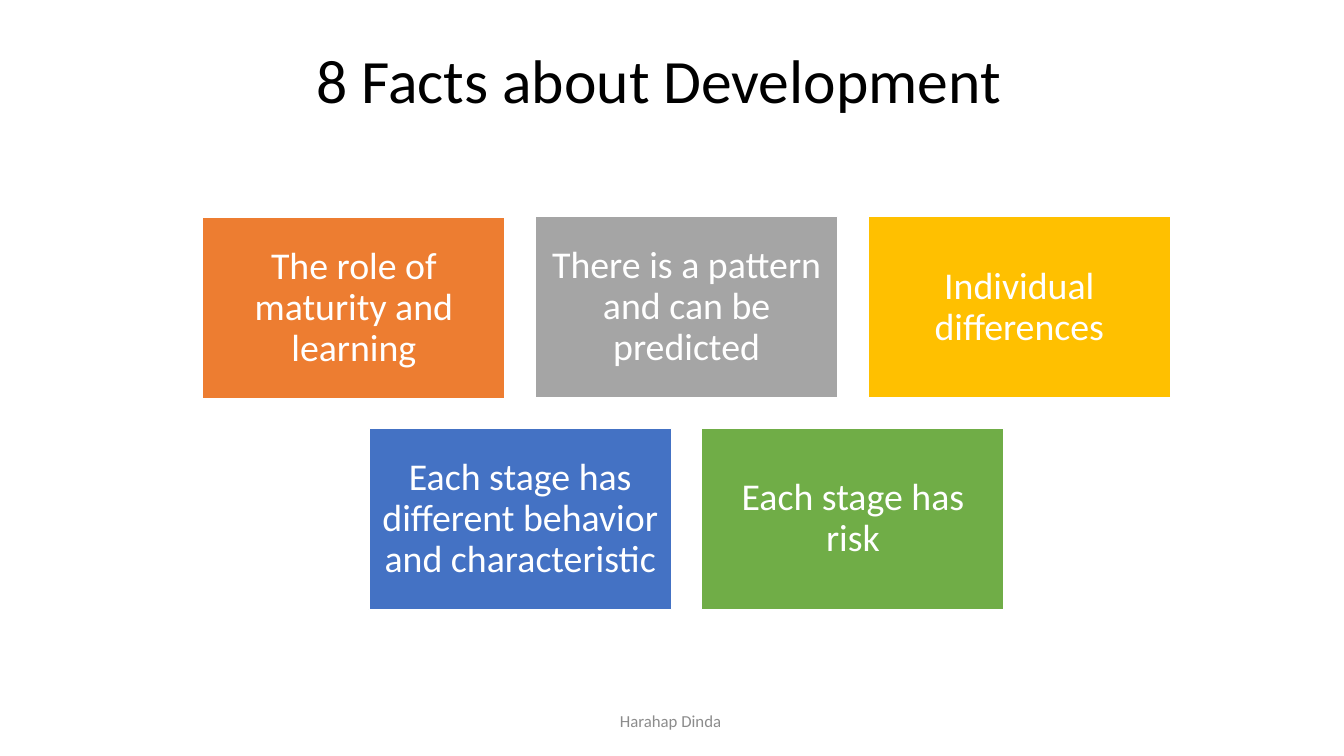
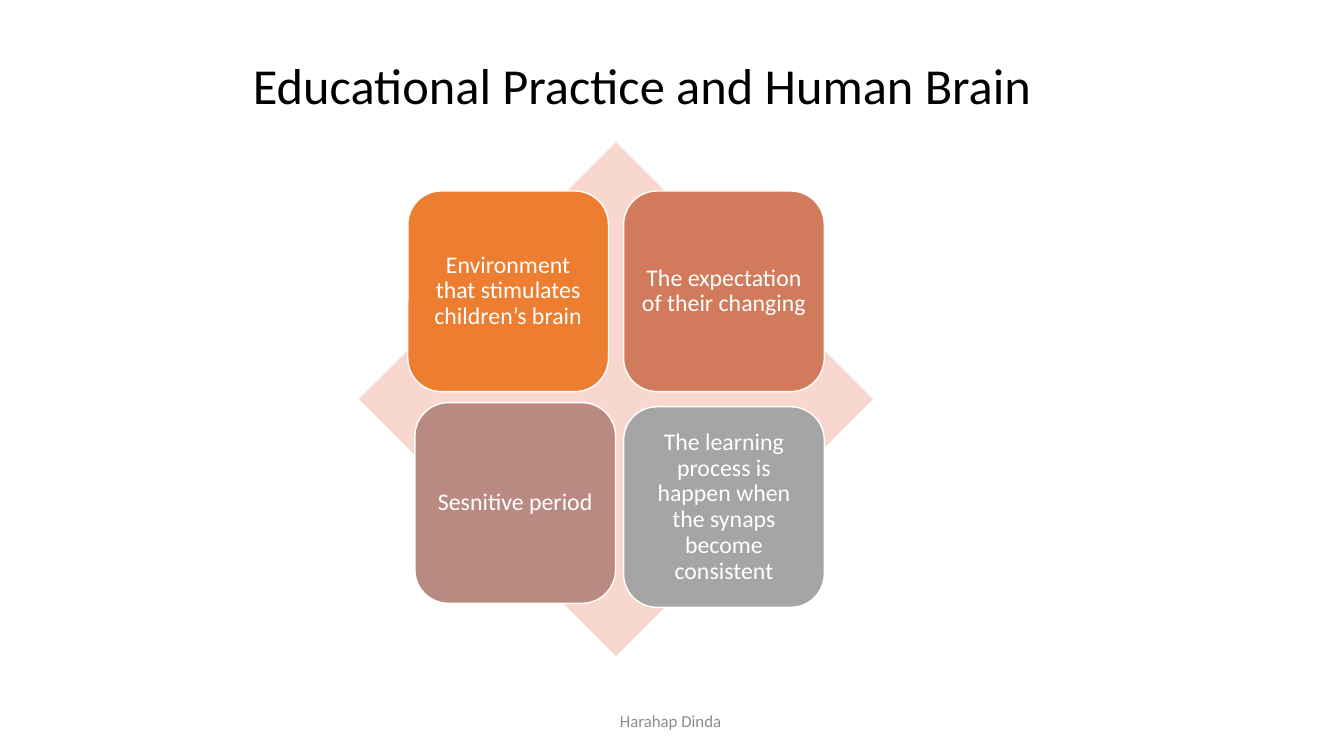
from dataclasses import dataclass

from pptx import Presentation
from pptx.dml.color import RGBColor
from pptx.enum.shapes import MSO_SHAPE
from pptx.enum.text import MSO_ANCHOR, PP_ALIGN
from pptx.util import Inches, Pt

RECTANGLE, ROUNDED, DIAMOND = MSO_SHAPE.RECTANGLE, MSO_SHAPE.ROUNDED_RECTANGLE, MSO_SHAPE.DIAMOND
LEFT, CENTER = PP_ALIGN.LEFT, PP_ALIGN.CENTER
TOP, MIDDLE = MSO_ANCHOR.TOP, MSO_ANCHOR.MIDDLE


@dataclass(frozen=True)
class Theme:
    font: str = "Calibri"
    black: str = "000000"
    white: str = "FFFFFF"
    footer_gray: str = "8C8C8C"
    orange: str = "ED7D31"
    gray: str = "A5A5A5"
    gold: str = "FFC000"
    blue: str = "4472C4"
    green: str = "70AD47"
    terracotta: str = "D17B5C"
    mauve: str = "B98A82"
    pale_pink: str = "F8D7CE"
    footer_size: int = 12
    fact_size: int = 27
    practice_size: int = 17
    line_spacing: float = 0.9


THEME = Theme()
SLIDE_WIDTH, SLIDE_HEIGHT = 13.33, 7.5
FOOTER = "Harahap Dinda "
FOOTER_BOX = (4.42, 6.95, 4.5, 0.4)

# Each card: text, fill, (right, down) nudge from its grid place.
FACTS = {
    "title": "8 Facts about Development",
    "title_box": (3.04, 0.45, 8.16, 1.11),
    "title_size": 44,
    "rows": [
        [("The role of maturity and learning", THEME.orange, (0, 0.01)),
         ("There is a pattern and can be predicted", THEME.gray, (0, 0)),
         ("Individual differences", THEME.gold, (0, 0))],
        [("Each stage has different behavior and characteristic", THEME.blue, (0, 0)),
         ("Each stage has risk", THEME.green, (0, 0))],
    ],
    "center": (6.81, 4.1),
    "card": (3, 1.8),
    "gap": 0.3,
    "style": {"kind": RECTANGLE, "size": THEME.fact_size, "inset": 0.11},
}
PRACTICE = {
    "title": "Educational Practice and Human Brain",
    "title_box": (2.41, 0.56, 8.29, 0.81),
    "title_size": 36,
    "rows": [
        [("Environment that stimulates children’s brain", THEME.orange, (0, 0)),
         ("The expectation of their changing", THEME.terracotta, (0, 0))],
        [("Sesnitive period", THEME.mauve, (0.07, -0.04)),
         ("The learning process is happen when the synaps become consistent",
          THEME.gray, (0, 0))],
    ],
    "center": (6.11, 3.96),
    "card": (1.99, 1.99),
    "gap": 0.15,
    "style": {"kind": ROUNDED, "size": THEME.practice_size, "inset": 0.07},
    "diamond": 5.1,
}


def write_text(shape, text, *, size, color, align=LEFT, anchor=TOP,
               insets=(0.1, 0.05), spacing=THEME.line_spacing):
    frame = shape.text_frame
    frame.word_wrap = True
    frame.vertical_anchor = anchor
    frame.margin_left = frame.margin_right = Inches(insets[0])
    frame.margin_top = frame.margin_bottom = Inches(insets[1])
    paragraph = frame.paragraphs[0]
    paragraph.alignment = align
    paragraph.line_spacing = spacing
    run = paragraph.add_run()
    run.text = text
    run.font.name = THEME.font
    run.font.size = Pt(size)
    run.font.color.rgb = RGBColor.from_string(color)


def add_text(slide, box, text, **text_format):
    write_text(slide.shapes.add_textbox(*map(Inches, box)), text, **text_format)


def add_filled_shape(slide, kind, box, fill, outline=None):
    shape = slide.shapes.add_shape(kind, *map(Inches, box))
    shape.shadow.inherit = False
    shape.fill.solid()
    shape.fill.fore_color.rgb = RGBColor.from_string(fill)
    if outline:
        shape.line.color.rgb = RGBColor.from_string(outline)
        shape.line.width = Pt(1)
    else:
        shape.line.fill.background()
    return shape


def add_cards(slide, rows, center, card, gap, *, kind, size, inset):
    """Lay out rows of equal cards, each row centred on the same axis."""
    width, height = card
    top = center[1] - (len(rows) * (height + gap) - gap) / 2
    for row_index, row in enumerate(rows):
        left = center[0] - (len(row) * (width + gap) - gap) / 2
        for column_index, (text, fill, (right, down)) in enumerate(row):
            box = (left + column_index * (width + gap) + right,
                   top + row_index * (height + gap) + down, width, height)
            shape = add_filled_shape(slide, kind, box, fill, outline=THEME.white)
            write_text(shape, text, size=size, color=THEME.white, align=CENTER,
                       anchor=MIDDLE, insets=(inset, inset))


def add_card_slide(presentation, content):
    slide = presentation.slides.add_slide(presentation.slide_layouts[6])
    add_text(slide, content["title_box"], content["title"],
             size=content["title_size"], color=THEME.black)
    center = content["center"]
    if "diamond" in content:
        side = content["diamond"]
        box = (center[0] - side / 2, center[1] - side / 2, side, side)
        add_filled_shape(slide, DIAMOND, box, THEME.pale_pink)
    add_cards(slide, content["rows"], center, content["card"], content["gap"],
              **content["style"])
    add_text(slide, FOOTER_BOX, FOOTER, size=THEME.footer_size,
             color=THEME.footer_gray, align=CENTER, anchor=MIDDLE, spacing=1.0)


def main():
    presentation = Presentation()
    presentation.slide_width = Inches(SLIDE_WIDTH)
    presentation.slide_height = Inches(SLIDE_HEIGHT)
    for content in (FACTS, PRACTICE):
        add_card_slide(presentation, content)
    presentation.save("out.pptx")


if __name__ == "__main__":
    main()
